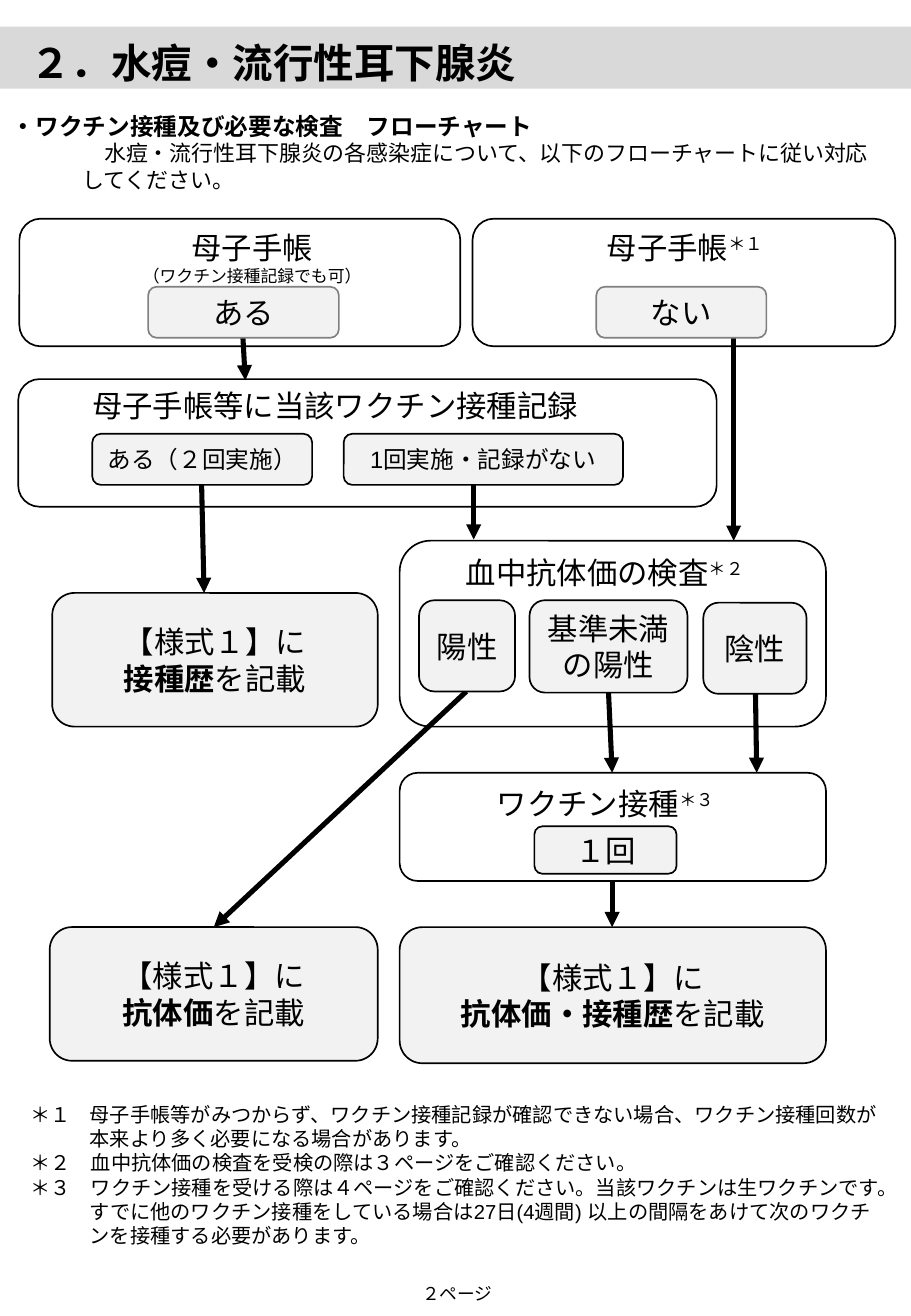
from dataclasses import dataclass

import pptx
import pptx.dml.color
import pptx.enum.shapes
import pptx.enum.text
import pptx.oxml.ns
import pptx.util
from lxml import etree
from pptx.util import Inches, Pt

SHAPES = pptx.enum.shapes.MSO_SHAPE
ALIGN = pptx.enum.text.PP_ALIGN
ANCHOR = pptx.enum.text.MSO_ANCHOR


@dataclass(frozen=True)
class Theme:
    text: str = "000000"
    line: str = "000000"
    soft_line: str = "808080"
    band: str = "D9D9D9"
    panel: str = "FFFFFF"
    box: str = "F2F2F2"
    font: str = "Arial"
    note_font: str = "Calibri"
    title_size: float = 24
    step_size: float = 18
    heading_size: float = 14
    body_size: float = 13
    note_size: float = 12
    page_size: float = 10.5
    small_size: float = 10
    outline: float = 1
    arrow: float = 3


THEME = Theme()


def rgb(value):
    return pptx.dml.color.RGBColor.from_string(value)


def set_paragraph(paragraph, runs, size, font=THEME.font, align=ALIGN.LEFT, bold=False):
    """Fill a paragraph from a string, or from (text, style) pairs.

    A style is "bold", "super", a font name, or None.
    """
    paragraph.alignment = align
    paragraph.font.size = Pt(size)
    paragraph.font.name = font
    paragraph.font.bold = bold
    paragraph.font.color.rgb = rgb(THEME.text)
    for text, style in [(runs, None)] if isinstance(runs, str) else runs:
        run = paragraph.add_run()
        run.text = text
        if style == "bold":
            run.font.bold = True
        elif style == "super":
            run._r.get_or_add_rPr().set("baseline", "30000")
        elif style:
            run.font.name = style


def indent(paragraph, left, first=0.0):
    properties = paragraph._p.get_or_add_pPr()
    properties.set("marL", str(Inches(left)))
    properties.set("indent", str(Inches(first)))


def add_paragraphs(frame, count):
    return [frame.paragraphs[0]] + [frame.add_paragraph() for _ in range(count - 1)]


def center_text(frame, lines, sizes, font):
    frame.word_wrap = True
    frame.margin_left = frame.margin_right = 0
    for paragraph, runs, size in zip(add_paragraphs(frame, len(lines)), lines, sizes):
        set_paragraph(paragraph, runs, size, font, ALIGN.CENTER)


def add_text_box(slide, left, top, width, height):
    box = slide.shapes.add_textbox(Inches(left), Inches(top), Inches(width), Inches(height))
    box.text_frame.word_wrap = True
    return box.text_frame


def add_caption(slide, place, lines, font=THEME.font, sizes=(THEME.step_size,)):
    center_text(add_text_box(slide, *place), lines, sizes, font)


def add_filled(slide, kind, place, fill, line=None):
    shape = slide.shapes.add_shape(kind, *map(Inches, place))
    shape.shadow.inherit = False
    shape.fill.solid()
    shape.fill.fore_color.rgb = rgb(fill)
    if line:
        shape.line.color.rgb = rgb(line)
        shape.line.width = Pt(THEME.outline)
    else:
        shape.line.fill.background()
    return shape


def add_panel(slide, *place):
    add_filled(slide, SHAPES.ROUNDED_RECTANGLE, place, THEME.panel, THEME.line)


def add_box(slide, place, lines, font=THEME.font, size=THEME.step_size, line=THEME.line):
    shape = add_filled(slide, SHAPES.ROUNDED_RECTANGLE, place, THEME.box, line)
    shape.text_frame.vertical_anchor = ANCHOR.MIDDLE
    center_text(shape.text_frame, lines, [size] * len(lines), font)


def add_arrow(slide, *ends):
    arrow = slide.shapes.add_connector(
        pptx.enum.shapes.MSO_CONNECTOR.STRAIGHT, *map(Inches, ends))
    arrow.line.color.rgb = rgb(THEME.line)
    arrow.line.width = Pt(THEME.arrow)
    qn = pptx.oxml.ns.qn
    etree.SubElement(arrow.line._get_or_add_ln(), qn("a:tailEnd"), type="triangle")
    etree.SubElement(arrow.element.spPr, qn("a:effectLst"))


def add_title(slide):
    title = slide.shapes.title
    band = add_filled(slide, SHAPES.RECTANGLE, (-0.12, 0.22, 7.92, 0.51), THEME.band)
    title.element.addprevious(band.element)
    title.left, title.top = Inches(0.15), Inches(0.26)
    title.width, title.height = Inches(5.76), Inches(0.5)
    frame = title.text_frame
    frame.auto_size = pptx.enum.text.MSO_AUTO_SIZE.NONE
    frame.vertical_anchor = ANCHOR.TOP
    set_paragraph(frame.paragraphs[0], "２．水痘・流行性耳下腺炎", THEME.title_size, bold=True)


def add_introduction(slide):
    heading, body = add_paragraphs(add_text_box(slide, 0, 0.87, 7.37, 0.77), 2)
    set_paragraph(heading, "・ワクチン接種及び必要な検査　フローチャート",
                  THEME.heading_size, bold=True)
    set_paragraph(body, "　水痘・流行性耳下腺炎の各感染症について、"
                  "以下のフローチャートに従い対応してください。", THEME.body_size)
    indent(body, 0.58)


def add_notes_below(slide):
    notes = [
        "＊１\t母子手帳等がみつからず、ワクチン接種記録が確認できない場合、"
        "ワクチン接種回数が本来より多く必要になる場合があります。",
        "＊２　血中抗体価の検査を受検の際は３ページをご確認ください。",
        [("＊３　ワクチン接種を受ける際は４ページをご確認ください。当該ワクチンは"
          "生ワクチンです。すでに他のワクチン接種をしている場合は", None),
         ("27日(4週間) ", THEME.font),
         ("以上の間隔をあけて次のワクチンを接種する必要があります。", None)],
    ]
    frame = add_text_box(slide, 0.15, 9.02, 7.21, 1.31)
    for paragraph, note in zip(add_paragraphs(frame, len(notes)), notes):
        set_paragraph(paragraph, note, THEME.note_size, THEME.note_font)
        indent(paragraph, 0.49, -0.49)


def add_flowchart(slide):
    for panel in [(0.16, 1.8, 3.63, 1.05), (3.89, 1.8, 3.48, 1.05),
                  (0.15, 3.12, 5.75, 1.05), (3.29, 4.45, 3.51, 1.53),
                  (3.29, 6.36, 3.51, 0.89)]:
        add_panel(slide, *panel)

    for ends in [(2, 2.78, 2.02, 3.13), (6.04, 2.78, 6.04, 4.45),
                 (1.66, 3.99, 1.68, 4.88), (3.9, 3.89, 3.9, 4.44),
                 (3.84, 5.69, 1.76, 7.63), (5.01, 5.7, 5.04, 6.36),
                 (6.22, 5.71, 6.23, 6.36), (5.04, 7.26, 5.04, 7.63)]:
        add_arrow(slide, *ends)

    for place, answer in [((1.22, 2.36, 1.57, 0.42), "ある"),
                          ((4.91, 2.36, 1.4, 0.42), "ない")]:
        add_box(slide, place, [answer], line=THEME.soft_line)
    for place, answer in [((0.76, 3.57, 1.81, 0.42),
                           [("ある（", None), ("２回実施）", THEME.note_font)]),
                          ((2.83, 3.57, 2.3, 0.42), "1回実施・記録がない")]:
        add_box(slide, place, [answer], size=THEME.heading_size)
    for place, lines in [((3.45, 4.94, 0.79, 0.75), ["陽性"]),
                         ((4.36, 4.94, 1.3, 0.76), ["基準未満", "の陽性"]),
                         ((5.79, 4.96, 0.85, 0.75), ["陰性"]),
                         ((4.4, 6.8, 1.17, 0.39), ["１回"])]:
        add_box(slide, place, lines, THEME.note_font)
    for place, entry in [((0.43, 4.88, 2.68, 1.1), "接種歴"),
                         ((0.41, 7.63, 2.7, 1.1), "抗体価"),
                         ((3.29, 7.63, 3.51, 1.12), "抗体価・接種歴")]:
        add_box(slide, place, ["【様式１】に", [(entry, "bold"), ("を記載", None)]])

    add_caption(slide, (1.07, 1.84, 2.01, 0.57), ["母子手帳", "（ワクチン接種記録でも可）"],
                sizes=(THEME.step_size, THEME.small_size))
    for place, label, mark, font in [
            ((4.79, 1.84, 1.7, 0.4), "母子手帳", "＊１", THEME.font),
            ((3.51, 4.51, 2.94, 0.4), "血中抗体価の検査", "＊２", THEME.note_font),
            ((3.74, 6.41, 2.49, 0.4), "ワクチン接種", "＊３", THEME.note_font)]:
        add_caption(slide, place, [[(label, None), (mark, "super")]], font)
    record = add_text_box(slide, 0.66, 3.14, 4.73, 0.4)
    set_paragraph(record.paragraphs[0], "母子手帳等に当該ワクチン接種記録", THEME.step_size)


def main():
    presentation = pptx.Presentation()
    presentation.slide_width, presentation.slide_height = Inches(7.5), Inches(10.83)
    slide = presentation.slides.add_slide(presentation.slide_layouts[5])
    add_title(slide)
    add_introduction(slide)
    add_flowchart(slide)
    add_notes_below(slide)
    add_caption(slide, (2.66, 10.51, 2.21, 0.28), ["２ページ"], sizes=(THEME.page_size,))
    presentation.save("out.pptx")


if __name__ == "__main__":
    main()
